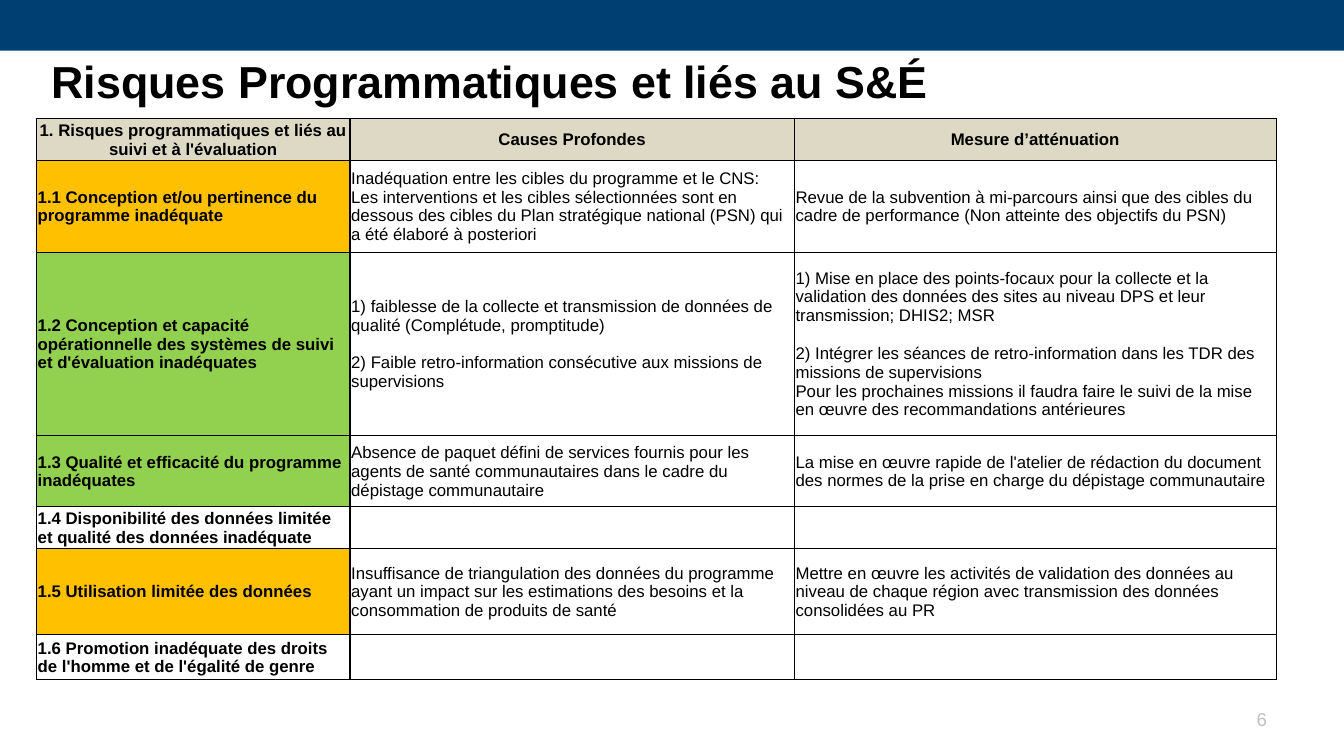
from dataclasses import dataclass

from lxml import etree
from pptx import Presentation
from pptx import util as u
from pptx.dml.color import RGBColor
from pptx.enum import shapes, text
from pptx.oxml import ns


@dataclass(frozen=True)
class Theme:
    font: str = "Arial"
    title_size: float = 32
    table_size: float = 12
    number_size: float = 13.3
    black: str = "000000"
    white: str = "FFFFFF"
    gray: str = "BFBFBF"
    navy: str = "003F72"
    beige: str = "DDD9C4"
    amber: str = "FFC000"
    green: str = "92D050"
    outer_line: float = 1
    inner_line: float = 0.5
    block_gap: float = 13.5


THEME = Theme()

HEADERS = [
    "1. Risques programmatiques et liés au suivi et à l'évaluation",
    "Causes Profondes",
    "Mesure d’atténuation",
]

# Each risk: colour, name, causes, mitigation; "\n\n" parts two spaced blocks
RISKS = [
    (THEME.amber, "1.1 Conception et/ou pertinence du programme inadéquate",
     "Inadéquation entre les cibles du programme et le CNS:\n"
     "Les interventions et les cibles sélectionnées sont en dessous des cibles du "
     "Plan stratégique national (PSN) qui a été élaboré à posteriori",
     "Revue de la subvention à mi-parcours ainsi que des cibles du cadre de "
     "performance (Non atteinte des objectifs du PSN)"),
    (THEME.green, "1.2 Conception et capacité opérationnelle des systèmes de suivi "
     "et d'évaluation inadéquates",
     "1) faiblesse de la collecte et transmission de données de qualité "
     "(Complétude, promptitude)\n\n"
     "2) Faible retro-information consécutive aux missions de supervisions",
     "1) Mise en place des points-focaux pour la collecte et la validation des "
     "données des sites au niveau DPS et leur transmission; DHIS2; MSR\n\n"
     "2) Intégrer les séances de retro-information dans les TDR des missions de "
     "supervisions\n"
     "Pour les prochaines missions il faudra faire le suivi de la mise en œuvre "
     "des recommandations antérieures"),
    (THEME.green, "1.3 Qualité et efficacité du programme inadéquates",
     "Absence de paquet défini de services fournis pour les agents de santé "
     "communautaires dans le cadre du dépistage communautaire",
     "La mise en œuvre rapide de l'atelier de rédaction du document des normes de "
     "la prise en charge du dépistage communautaire"),
    (THEME.white, "1.4 Disponibilité des données limitée et qualité des données "
     "inadéquate", "", ""),
    (THEME.amber, "1.5 Utilisation limitée des données",
     "Insuffisance de triangulation des données du programme ayant un impact sur "
     "les estimations des besoins et la consommation de produits de santé",
     "Mettre en œuvre les activités de validation des données au niveau de chaque "
     "région avec transmission des données consolidées au PR"),
    (THEME.white, "1.6 Promotion inadéquate des droits de l'homme et de l'égalité "
     "de genre", "", ""),
]

COLUMN_WIDTHS = [7.9, 11.2, 12.14]
ROW_HEIGHTS = [1, 2.31, 4.62, 1.8, 1, 2.18, 1.12]


def style_paragraph(para, size, color, bold=False, align=text.PP_ALIGN.LEFT):
    para.alignment = align
    para.font.name = THEME.font
    para.font.size = u.Pt(size)
    para.font.bold = bold
    para.font.color.rgb = RGBColor.from_string(color)


def set_margins(box, left, top, right, bottom):
    box.margin_left, box.margin_top = u.Cm(left), u.Cm(top)
    box.margin_right, box.margin_bottom = u.Cm(right), u.Cm(bottom)


def add_bar(page, width):
    bar = page.shapes.add_shape(shapes.MSO_SHAPE.RECTANGLE, 0, 0, width, u.Cm(1.28))
    bar.shadow.inherit = False
    bar.fill.solid()
    bar.fill.fore_color.rgb = RGBColor.from_string(THEME.navy)
    bar.line.fill.background()


def set_title(page, words):
    title = page.shapes.title
    title.left, title.top = u.Cm(1.3), u.Cm(1.3)
    title.width, title.height = u.Cm(29.87), u.Cm(1.57)
    frame = title.text_frame
    frame.text = words
    frame.auto_size = text.MSO_AUTO_SIZE.NONE
    frame.vertical_anchor = text.MSO_ANCHOR.MIDDLE
    set_margins(frame, 0, 0, 0, 0.13)
    style_paragraph(frame.paragraphs[0], THEME.title_size, THEME.black, bold=True)


def add_page_number(page, number):
    box = page.shapes.add_textbox(u.Cm(24.28), u.Cm(17.6), u.Cm(7.9), u.Cm(1.02))
    frame = box.text_frame
    frame.word_wrap = True
    frame.vertical_anchor = text.MSO_ANCHOR.MIDDLE
    frame.text = number
    style_paragraph(frame.paragraphs[0], THEME.number_size, THEME.gray,
                    align=text.PP_ALIGN.RIGHT)


def set_borders(cell, top, bottom):
    widths = {"a:lnL": THEME.outer_line, "a:lnR": THEME.outer_line,
              "a:lnT": top, "a:lnB": bottom}
    properties = cell._tc.get_or_add_tcPr()
    for index, (tag, width) in enumerate(widths.items()):
        line = etree.Element(ns.qn(tag), w=str(u.Pt(width)))
        fill = etree.SubElement(line, ns.qn("a:solidFill"))
        etree.SubElement(fill, ns.qn("a:srgbClr"), val=THEME.black)
        properties.insert(index, line)


def fill_cell(cell, words, color, bold, align):
    cell.fill.solid()
    cell.fill.fore_color.rgb = RGBColor.from_string(color)
    cell.vertical_anchor = text.MSO_ANCHOR.MIDDLE
    set_margins(cell, 0.03, 0.03, 0.03, 0)
    frame = cell.text_frame
    para = frame.paragraphs[0]
    for block_index, block in enumerate(words.split("\n\n")):
        for line_index, line in enumerate(block.split("\n")):
            if block_index or line_index:
                para = frame.add_paragraph()
            if block_index and not line_index:
                para.space_before = u.Pt(THEME.block_gap)
            if line:
                para.text = line
            style_paragraph(para, THEME.table_size, THEME.black, bold, align)


def add_risk_table(page):
    rows = [(THEME.beige, *HEADERS), *RISKS]
    table = page.shapes.add_table(
        len(rows), len(HEADERS), u.Cm(0.92), u.Cm(2.99),
        u.Cm(sum(COLUMN_WIDTHS)), u.Cm(sum(ROW_HEIGHTS))).table
    table.first_row = table.horz_banding = False
    for column, width in zip(table.columns, COLUMN_WIDTHS):
        column.width = u.Cm(width)
    for row, height in zip(table.rows, ROW_HEIGHTS):
        row.height = u.Cm(height)

    for row_index, (color, *entries) in enumerate(rows):
        header = row_index == 0
        last = row_index == len(rows) - 1
        align = text.PP_ALIGN.CENTER if header else text.PP_ALIGN.LEFT
        for column_index, words in enumerate(entries):
            cell = table.cell(row_index, column_index)
            labelled = header or column_index == 0
            fill_cell(cell, words, color if labelled else THEME.white, labelled, align)
            set_borders(cell,
                        THEME.outer_line if header else THEME.inner_line,
                        THEME.outer_line if last else THEME.inner_line)


def main():
    deck = Presentation()
    deck.slide_width, deck.slide_height = u.Cm(33.87), u.Cm(19.05)
    page = deck.slides.add_slide(deck.slide_layouts.get_by_name("Title Only"))
    add_bar(page, deck.slide_width)
    set_title(page, "Risques Programmatiques et liés au S&É")
    add_page_number(page, "6")
    add_risk_table(page)
    deck.save("out.pptx")


if __name__ == "__main__":
    main()
